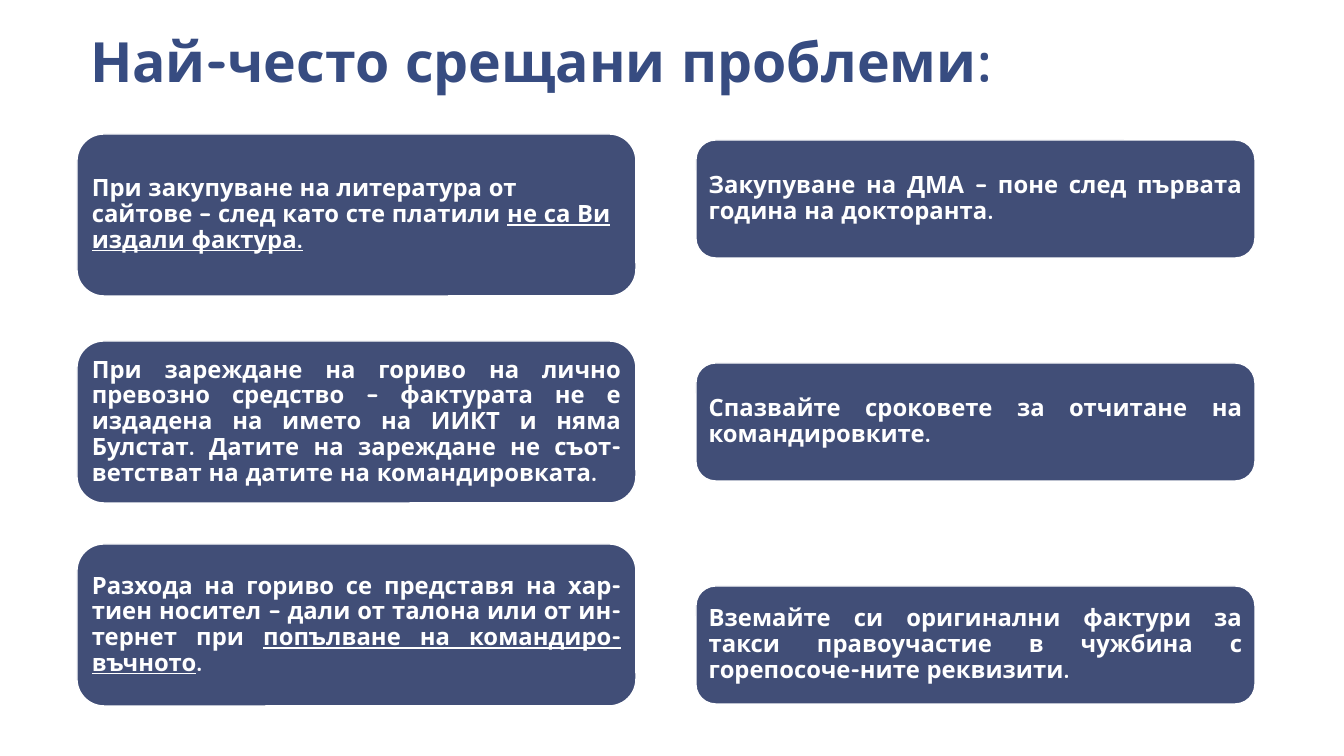
from pptx import Presentation
from pptx.dml.color import RGBColor
from pptx.enum.shapes import MSO_SHAPE
from pptx.enum.text import MSO_ANCHOR, MSO_AUTO_SIZE, PP_ALIGN
from pptx.util import Pt

HEADING = "Най-често срещани проблеми:"
LEFT, JUSTIFIED = PP_ALIGN.LEFT, PP_ALIGN.JUSTIFY

# Each problem: top, alignment, (text, underlined) pieces
COLUMNS = [
    {"left": 77, "height": 162, "problems": [
        (134, LEFT, [
            ("При закупуване на литература от сайтове – след като сте платили ", False),
            ("не са Ви издали фактура.", True)]),
        (341, JUSTIFIED, [
            ("При зареждане на гориво на лично превозно средство – фактурата не е "
             "издадена на името на ИИКТ и няма Булстат. Датите на зареждане не "
             "съот-ветстват на датите на командировката.", False)]),
        (544, JUSTIFIED, [
            ("Разхода на гориво се представя на хар-тиен носител – дали от талона "
             "или от ин-тернет при ", False),
            ("попълване на командиро-въчното", True),
            (".", False)]),
    ]},
    {"left": 696, "height": 118, "problems": [
        (140, JUSTIFIED, [
            ("Закупуване на ДМА – поне след първата година на докторанта.", False)]),
        (363, JUSTIFIED, [
            ("Спазвайте сроковете за отчитане на командировките.", False)]),
        (586, JUSTIFIED, [
            ("Вземайте си оригинални фактури за такси правоучастие в чужбина с "
             "горепосоче-ните реквизити.", False)]),
    ]},
]
CARD_WIDTH = 559
COLORS = {"heading": "374C81", "card": "414E77", "white": "FFFFFF"}
FONT = "Quicksand"


def px(length):
    return round(length * 914400 / 100.8)


def color(name):
    return RGBColor.from_string(COLORS[name])


def place(shape, left, top, width, height):
    shape.left, shape.top = px(left), px(top)
    shape.width, shape.height = px(width), px(height)


def set_frame(frame, anchor, side, edge):
    frame.word_wrap = True
    frame.auto_size = MSO_AUTO_SIZE.NONE
    frame.vertical_anchor = anchor
    frame.margin_left = frame.margin_right = px(side)
    frame.margin_top = frame.margin_bottom = px(edge)


def set_font(font, size, color_name):
    font.name, font.size, font.bold = FONT, Pt(size), True
    font.color.rgb = color(color_name)


def add_card(slide, left, top, height, alignment, pieces):
    card = slide.shapes.add_shape(
        MSO_SHAPE.ROUNDED_RECTANGLE, px(left), px(top), px(CARD_WIDTH), px(height))
    card.shadow.inherit = False
    card.fill.solid()
    card.fill.fore_color.rgb = color("card")
    card.line.color.rgb = color("white")
    card.line.width = Pt(1)
    set_frame(card.text_frame, MSO_ANCHOR.MIDDLE, 7, 7)
    problem = card.text_frame.paragraphs[0]
    problem.alignment = alignment
    problem.line_spacing = 0.9
    for text, underlined in pieces:
        piece = problem.add_run()
        piece.text = text
        set_font(piece.font, 17, "white")
        piece.font.underline = underlined


def main():
    deck = Presentation()
    deck.slide_width, deck.slide_height = px(1344), px(756)
    slide = deck.slides.add_slide(deck.slide_layouts[5])

    heading = slide.shapes.title
    place(heading, 77, 29, 1120, 72)
    heading.text_frame.text = HEADING
    set_frame(heading.text_frame, MSO_ANCHOR.BOTTOM, 13, 7)
    heading_line = heading.text_frame.paragraphs[0]
    heading_line.alignment = LEFT
    heading_line.line_spacing = 0.85
    set_font(heading_line.runs[0].font, 39.6, "heading")

    for column in COLUMNS:
        for top, alignment, pieces in column["problems"]:
            add_card(slide, column["left"], top, column["height"], alignment, pieces)

    deck.save("out.pptx")


if __name__ == "__main__":
    main()
